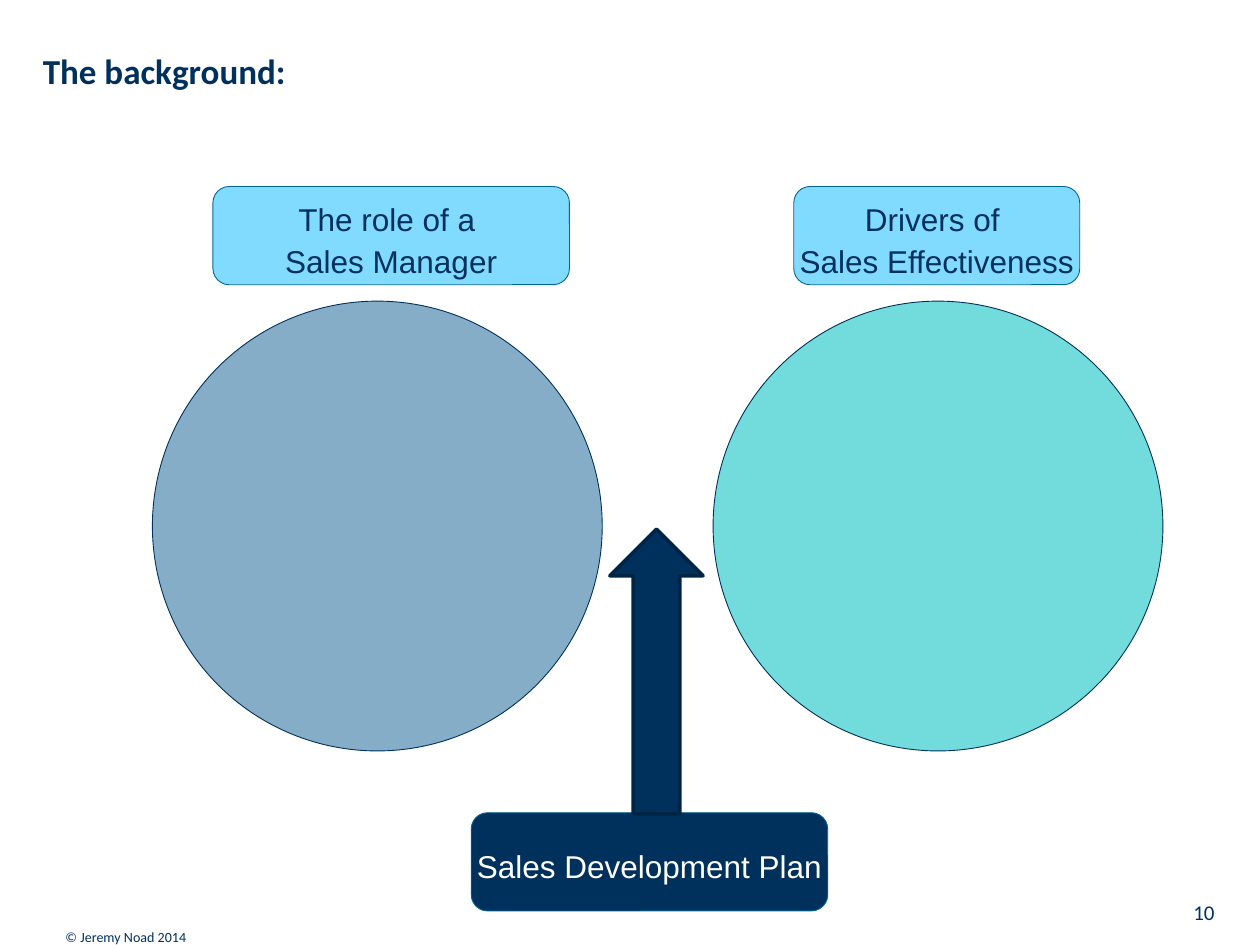
from lxml import etree
from pptx import Presentation
from pptx.dml.color import RGBColor
from pptx.enum.shapes import MSO_SHAPE
from pptx.enum.text import MSO_ANCHOR, MSO_AUTO_SIZE, PP_ALIGN
from pptx.oxml.ns import qn
from pptx.util import Inches, Pt

ELLIPSE, ROUNDED, UP_ARROW = (
    MSO_SHAPE.OVAL, MSO_SHAPE.ROUNDED_RECTANGLE, MSO_SHAPE.UP_ARROW)
TOP, MIDDLE, BOTTOM = MSO_ANCHOR.TOP, MSO_ANCHOR.MIDDLE, MSO_ANCHOR.BOTTOM
LEFT, CENTER, RIGHT = PP_ALIGN.LEFT, PP_ALIGN.CENTER, PP_ALIGN.RIGHT
NO_AUTOFIT = MSO_AUTO_SIZE.NONE

NAVY = RGBColor(0x00, 0x30, 0x5C)
DARK_NAVY = RGBColor(0x00, 0x24, 0x44)
EDGE_BLUE = RGBColor(0x00, 0x67, 0x93)
SKY = RGBColor(0x81, 0xDA, 0xFF)
STEEL = RGBColor(0x0D, 0x5C, 0x91)
TEAL = RGBColor(0x33, 0xCC, 0xCC)
WHITE = RGBColor(0xFF, 0xFF, 0xFF)

prs = Presentation()
prs.slide_width, prs.slide_height = Inches(10), Inches(7.5)
slide = prs.slides.add_slide(prs.slide_layouts[5])


def add_figure(kind, box, fill, line, weight):
    figure = slide.shapes.add_shape(kind, *[Inches(v) for v in box])
    figure.shadow.inherit = False
    figure.fill.solid()
    figure.fill.fore_color.rgb = fill
    figure.line.color.rgb = line
    figure.line.width = Pt(weight)
    return figure


def write(shape, lines, font, size, color, align, anchor, margins, spacing=1.0):
    frame = shape.text_frame
    frame.auto_size = NO_AUTOFIT
    frame.vertical_anchor = anchor
    (frame.margin_left, frame.margin_top,
     frame.margin_right, frame.margin_bottom) = [Inches(v) for v in margins]
    frame.text = "\n".join(lines)
    for paragraph in frame.paragraphs:
        paragraph.alignment = align
        paragraph.line_spacing = spacing
        paragraph.font.name = font
        paragraph.font.size = Pt(size)
        paragraph.font.color.rgb = color


# Title
title = slide.shapes.title
title.left, title.top = Inches(0.18), Inches(0.18)
title.width, title.height = Inches(6.32), Inches(1.12)
write(title, ["The background:"], "Calibri", 20, NAVY, LEFT, TOP,
      (0.16, 0.18, 0, 0), 1.1)
title.text_frame.paragraphs[0].font.bold = True

# Translucent circles: left, colour, opacity in percent
for left, color, opacity in [(5.66, TEAL, 69), (1.21, STEEL, 50)]:
    circle = add_figure(ELLIPSE, (left, 2.39, 3.57, 3.57), color, NAVY, 0.5)
    rgb = circle.fill._xPr.find(qn("a:solidFill"))[0]
    etree.SubElement(rgb, qn("a:alpha"), val=str(opacity * 1000))

# Circle headings and the plan below: left, top, width, fill, text colour, lines
labels = [
    (6.3, 1.48, 2.27, SKY, NAVY, ["Drivers of ", "Sales Effectiveness"]),
    (1.69, 1.48, 2.83, SKY, NAVY, ["The role of a ", "Sales Manager"]),
    (3.74, 6.45, 2.83, NAVY, WHITE, ["Sales Development Plan"]),
]
for left, top, width, fill, color, lines in labels:
    label = add_figure(ROUNDED, (left, top, width, 0.78), fill, EDGE_BLUE, 0.5)
    write(label, lines, "Arial", 18, color, CENTER, MIDDLE,
          (0.1, 0.09, 0.1, 0.05), 1.1)
    label.text_frame.word_wrap = False

# Arrow rising from the plan
add_figure(UP_ARROW, (4.84, 4.2, 0.74, 2.26), NAVY, DARK_NAVY, 2)

# Page number and copyright line
for left, top, width, text, size, align in [
    (7.61, 7.06, 2.03, "10", 12, RIGHT),
    (0.52, 7.22, 7.26, "© Jeremy Noad 2014", 8, LEFT),
]:
    footer = slide.shapes.add_textbox(
        Inches(left), Inches(top), Inches(width), Inches(0.28))
    write(footer, [text], "Calibri", size, NAVY, align, BOTTOM, (0, 0, 0, 0))
    footer.text_frame.word_wrap = True

prs.save("out.pptx")
